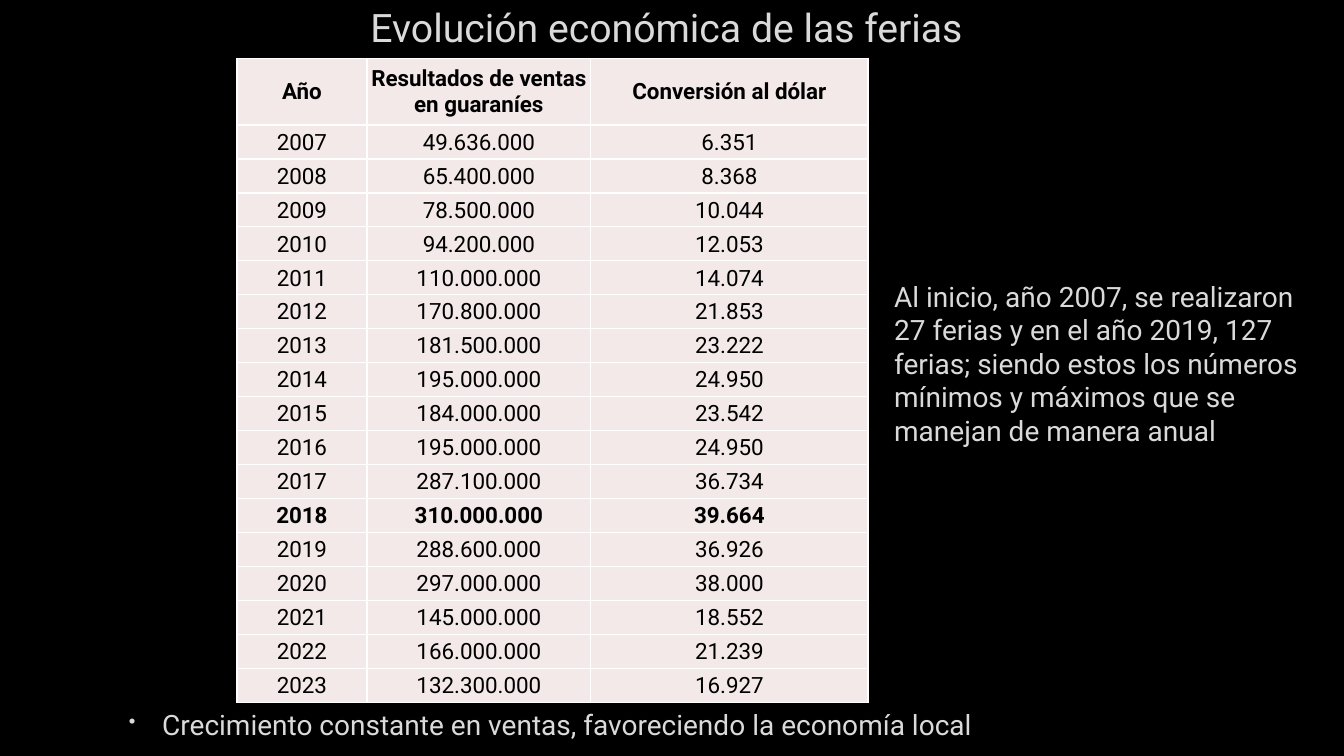
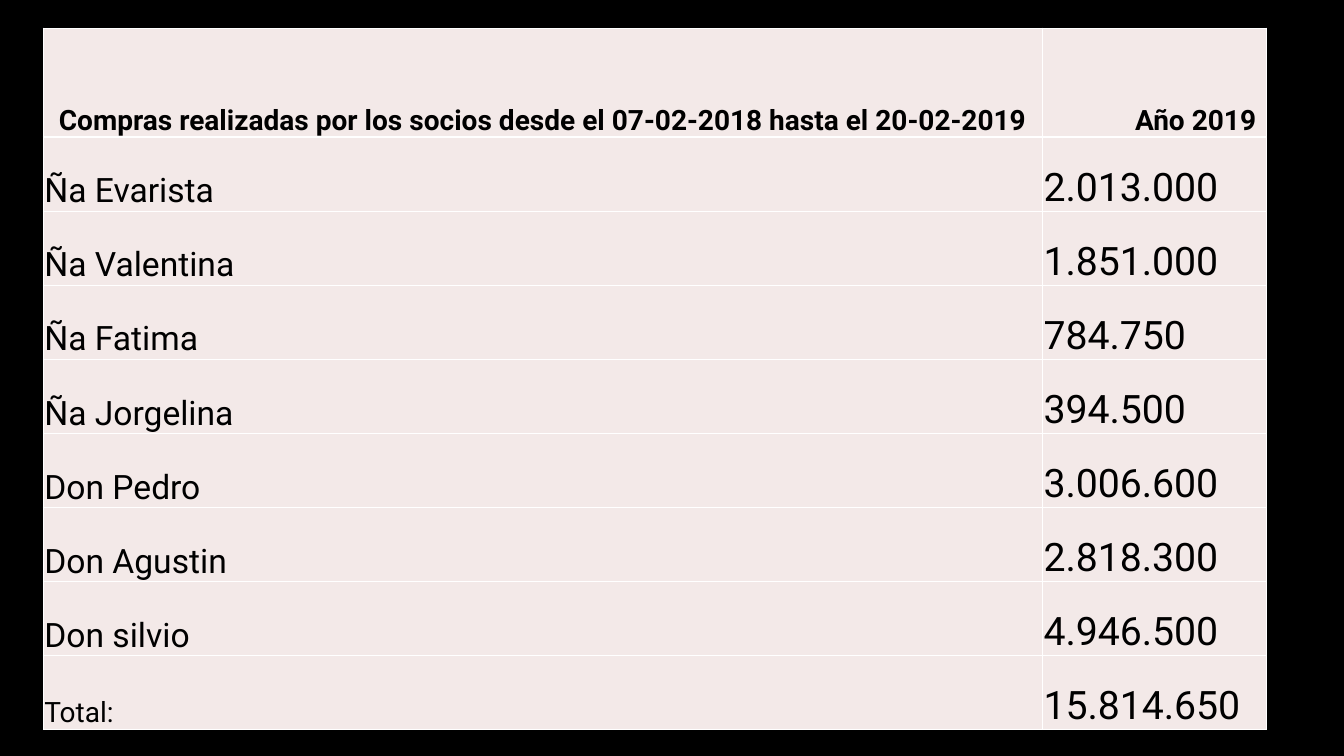
from dataclasses import dataclass
from lxml.etree import SubElement
from pptx import Presentation
from pptx.dml.color import RGBColor
from pptx.enum.text import MSO_ANCHOR, PP_ALIGN
from pptx.oxml.ns import qn
from pptx.util import Inches, Pt


@dataclass(frozen=True)
class Theme:
    font: str = "Roboto"
    back: str = "000000"
    light: str = "DADADA"
    dark: str = "000000"
    cell: str = "F3E9E8"
    rule: str = "FFFFFF"
    title: int = 28
    name: int = 24
    body: int = 20
    small: int = 16


theme = Theme()
center, left, right = PP_ALIGN.CENTER, PP_ALIGN.LEFT, PP_ALIGN.RIGHT


def style(para, size, color, align=left, bold=False):
    para.alignment = align
    font = para.font
    font.name, font.size, font.bold = theme.font, Pt(size), bold
    font.color.rgb = RGBColor.from_string(color)


def grid(slide, x, y, cols, head, height, rows, anchor, look):
    step = (height - head) / (len(rows) - 1)
    frame = slide.shapes.add_table(
        len(rows), len(cols), Inches(x), Inches(y), Inches(sum(cols)), Inches(height))
    table = frame.table
    table.horz_banding = False
    for col, width in zip(table.columns, cols):
        col.width = Inches(width)
    for i, row in enumerate(rows):
        table.rows[i].height = Inches(step if i else head)
        for j, text in enumerate(row):
            cell = table.cell(i, j)
            size, align, bold, pad = look(i, j)
            cell.vertical_anchor = anchor
            cell.margin_left = cell.margin_top = Inches(0.01)
            cell.margin_right, cell.margin_bottom = Inches(pad), 0
            props = cell._tc.get_or_add_tcPr()
            for side in ("a:lnL", "a:lnR", "a:lnT", "a:lnB"):
                line = SubElement(props, qn(side), w=str(Pt(1)))
                fill = SubElement(line, qn("a:solidFill"))
                SubElement(fill, qn("a:srgbClr"), val=theme.rule)
            cell.fill.solid()
            cell.fill.fore_color.rgb = RGBColor.from_string(theme.cell)
            para = cell.text_frame.paragraphs[0]
            para.text = text
            style(para, size, theme.dark, align, bold)


deck = Presentation()
deck.slide_width, deck.slide_height = Inches(13.33), Inches(7.5)
slides = [deck.slides.add_slide(deck.slide_layouts[6]) for _ in range(2)]
for slide in slides:
    slide.background.fill.solid()
    slide.background.fill.fore_color.rgb = RGBColor.from_string(theme.back)
fairs, buys = slides

sales = [
    ("Año", "Resultados de ventas en guaraníes", "Conversión al dólar"),
    ("2007", "49.636.000", "6.351"),
    ("2008", "65.400.000", "8.368"),
    ("2009", "78.500.000", "10.044"),
    ("2010", "94.200.000", "12.053"),
    ("2011", "110.000.000", "14.074"),
    ("2012", "170.800.000", "21.853"),
    ("2013", "181.500.000", "23.222"),
    ("2014", "195.000.000", "24.950"),
    ("2015", "184.000.000", "23.542"),
    ("2016", "195.000.000", "24.950"),
    ("2017", "287.100.000", "36.734"),
    ("2018", "310.000.000", "39.664"),
    ("2019", "288.600.000", "36.926"),
    ("2020", "297.000.000", "38.000"),
    ("2021", "145.000.000", "18.552"),
    ("2022", "166.000.000", "21.239"),
    ("2023", "132.300.000", "16.927"),
]
grid(fairs, 2.35, 0.58, (1.29, 2.22, 2.75), 0.66, 6.39, sales, MSO_ANCHOR.MIDDLE,
     lambda i, j: (theme.small, center, i == 0 or sales[i][0] == "2018", 0.01))

notes = [
    ("Evolución económica de las ferias",
     0.95, -0.26, 11.32, 1.06, theme.title, center, MSO_ANCHOR.MIDDLE, 0, 0),
    ("Crecimiento constante en ventas, favoreciendo la economía local",
     1.13, 6.97, 11.32, 0.66, theme.body, left, MSO_ANCHOR.TOP, 0.38, -0.33),
    ("Al inicio, año 2007, se realizaron 27 ferias y en el año 2019, 127 ferias; "
     "siendo estos los números mínimos y máximos que se manejan de manera anual",
     8.73, 2.72, 4.3, 2.34, theme.body, left, MSO_ANCHOR.TOP, 0.04, 0),
]
for text, x, y, width, height, size, align, anchor, margin, indent in notes:
    box = fairs.shapes.add_textbox(Inches(x), Inches(y), Inches(width), Inches(height))
    frame = box.text_frame
    frame.word_wrap, frame.vertical_anchor = True, anchor
    para = frame.paragraphs[0]
    para.text = text
    props = para._p.get_or_add_pPr()
    props.set("marL", str(Inches(margin)))
    props.set("indent", str(Inches(indent)))
    if indent:
        tint = SubElement(props, qn("a:buClr"))
        SubElement(tint, qn("a:srgbClr"), val=theme.light)
        SubElement(props, qn("a:buSzPct"), val="70000")
        SubElement(props, qn("a:buChar"), char="•")
    style(para, size, theme.light, align)

spent = [
    ("Compras realizadas por los socios desde el 07-02-2018 hasta el 20-02-2019",
     "Año 2019"),
    ("Ña Evarista", "2.013.000"),
    ("Ña Valentina", "1.851.000"),
    ("Ña Fatima", "784.750"),
    ("Ña Jorgelina", "394.500"),
    ("Don Pedro", "3.006.600"),
    ("Don Agustin", "2.818.300"),
    ("Don silvio", "4.946.500"),
    ("Total:", "15.814.650"),
]


def look(i, j):
    if i == 0:
        return theme.body, right if j else center, True, 0.1 if j else 0.01
    if j:
        return theme.title, left, False, 0.01
    return theme.body if i == len(spent) - 1 else theme.name, left, False, 0.01


grid(buys, 0.43, 0.28, (9.91, 2.22), 1.08, 6.96, spent, MSO_ANCHOR.BOTTOM, look)

deck.save("out.pptx")
